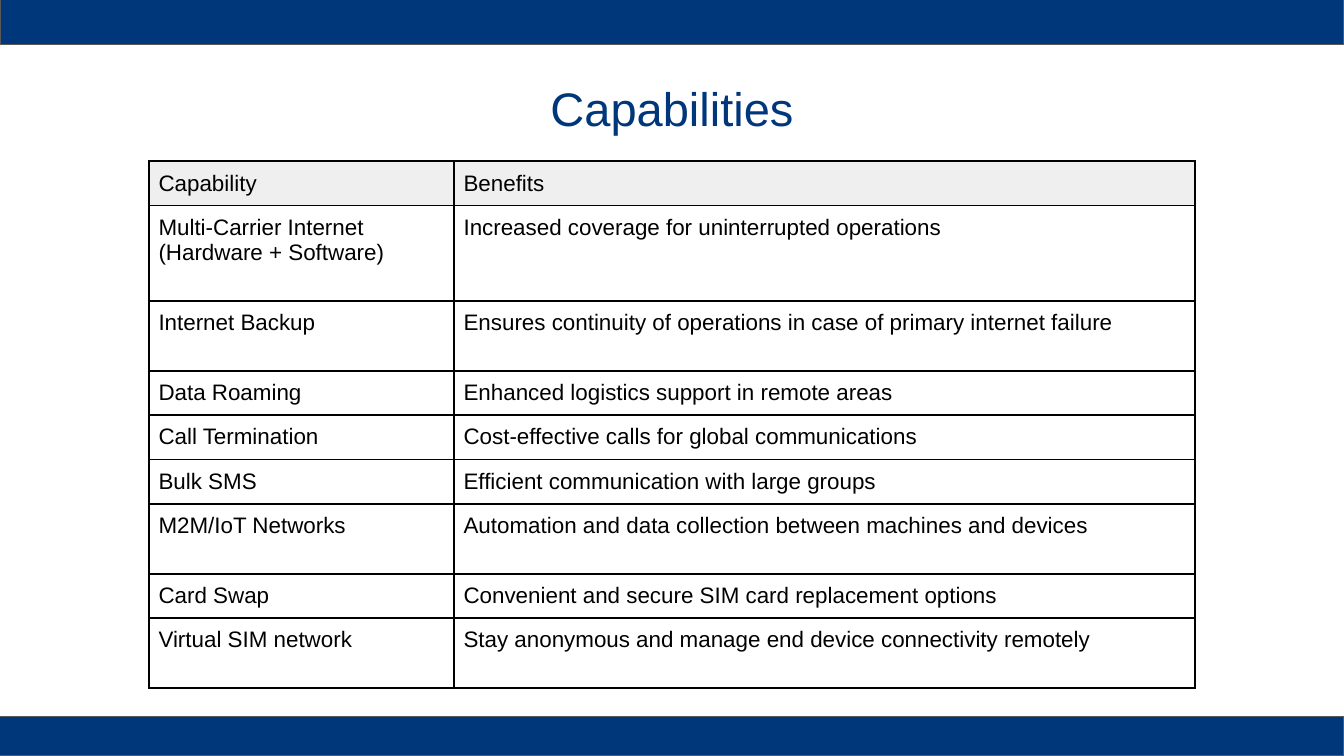
from typing import NamedTuple

from lxml.etree import SubElement
from pptx import Presentation
from pptx.dml.color import RGBColor
from pptx.enum.shapes import MSO_SHAPE
from pptx.enum.text import MSO_ANCHOR, MSO_AUTO_SIZE, PP_ALIGN
from pptx.oxml.ns import qn
from pptx.util import Inches, Pt

NAVY = RGBColor(0x00, 0x37, 0x7B)
DARK_GRAY = RGBColor(0x59, 0x59, 0x59)
LIGHT_GRAY = RGBColor(0xEF, 0xEF, 0xEF)
BLACK = RGBColor(0x00, 0x00, 0x00)
FONT = "Arial"


class Band(NamedTuple):
    left: float
    top: float
    width: float
    height: float


class CapabilityRow(NamedTuple):
    capability: str
    benefit: str
    height: float = 0.33


BANDS = [Band(0, -0.01, 10, 0.34), Band(-0.01, 5.33, 10.01, 0.29)]
COLUMN_WIDTHS = [2.27, 5.51]
ROWS = [
    CapabilityRow("Capability", "Benefits"),
    CapabilityRow("Multi-Carrier Internet (Hardware + Software)",
                  "Increased coverage for uninterrupted operations", 0.71),
    CapabilityRow("Internet Backup",
                  "Ensures continuity of operations in case of primary internet failure", 0.52),
    CapabilityRow("Data Roaming", "Enhanced logistics support in remote areas"),
    CapabilityRow("Call Termination", "Cost-effective calls for global communications"),
    CapabilityRow("Bulk SMS", "Efficient communication with large groups"),
    CapabilityRow("M2M/IoT Networks",
                  "Automation and data collection between machines and devices", 0.52),
    CapabilityRow("Card Swap", "Convenient and secure SIM card replacement options"),
    CapabilityRow("Virtual SIM network",
                  "Stay anonymous and manage end device connectivity remotely", 0.52),
]


def write_text(text_frame, text: str, *, size: float, color: RGBColor,
               alignment=PP_ALIGN.LEFT) -> None:
    paragraph = text_frame.paragraphs[0]
    paragraph.alignment = alignment
    run = paragraph.add_run()
    run.text = text
    run.font.name = FONT
    run.font.size = Pt(size)
    run.font.color.rgb = color


def set_margins(container, margin: float) -> None:
    for side in ("left", "right", "top", "bottom"):
        setattr(container, f"margin_{side}", Inches(margin))


def add_title(slide, text: str) -> None:
    title = slide.shapes.title
    title.left, title.top = Inches(0.34), Inches(0.49)
    title.width, title.height = Inches(9.32), Inches(0.63)
    text_frame = title.text_frame
    write_text(text_frame, text, size=25.2, color=NAVY, alignment=PP_ALIGN.CENTER)
    set_margins(text_frame, 0.1)
    text_frame.word_wrap = True
    text_frame.auto_size = MSO_AUTO_SIZE.NONE
    text_frame.vertical_anchor = MSO_ANCHOR.MIDDLE


def add_band(slide, band: Band) -> None:
    shape = slide.shapes.add_shape(MSO_SHAPE.RECTANGLE, *(Inches(length) for length in band))
    shape.shadow.inherit = False
    shape.fill.solid()
    shape.fill.fore_color.rgb = NAVY
    shape.line.color.rgb = DARK_GRAY
    shape.line.width = Pt(0.75)


def add_cell_borders(cell, color: RGBColor, width: float) -> None:
    properties = cell._tc.get_or_add_tcPr()
    for position, side in enumerate(("lnL", "lnR", "lnT", "lnB")):
        line = SubElement(properties, qn(f"a:{side}"), w=str(Pt(width)))
        fill = SubElement(line, qn("a:solidFill"))
        SubElement(fill, qn("a:srgbClr"), val=str(color))
        properties.insert(position, line)


def add_capability_table(slide, rows: list[CapabilityRow]) -> None:
    frame = slide.shapes.add_table(
        len(rows), len(COLUMN_WIDTHS), Inches(1.11), Inches(1.2),
        Inches(sum(COLUMN_WIDTHS)), Inches(sum(row.height for row in rows)))
    table = frame.table
    table.horz_banding = False
    for column, width in zip(table.columns, COLUMN_WIDTHS):
        column.width = Inches(width)
    for row_index, row in enumerate(rows):
        table.rows[row_index].height = Inches(row.height)
        for column_index, text in enumerate((row.capability, row.benefit)):
            cell = table.cell(row_index, column_index)
            write_text(cell.text_frame, text, size=12, color=BLACK)
            set_margins(cell, 0.07)
            if row_index == 0:
                cell.fill.solid()
                cell.fill.fore_color.rgb = LIGHT_GRAY
            else:
                cell.fill.background()
            add_cell_borders(cell, BLACK, 1)


def main() -> None:
    presentation = Presentation()
    presentation.slide_width = Inches(10)
    presentation.slide_height = presentation.slide_width * 9 // 16
    slide = presentation.slides.add_slide(presentation.slide_layouts[5])
    add_title(slide, "Capabilities")
    for band in BANDS:
        add_band(slide, band)
    add_capability_table(slide, ROWS)
    presentation.save("out.pptx")


if __name__ == "__main__":
    main()
